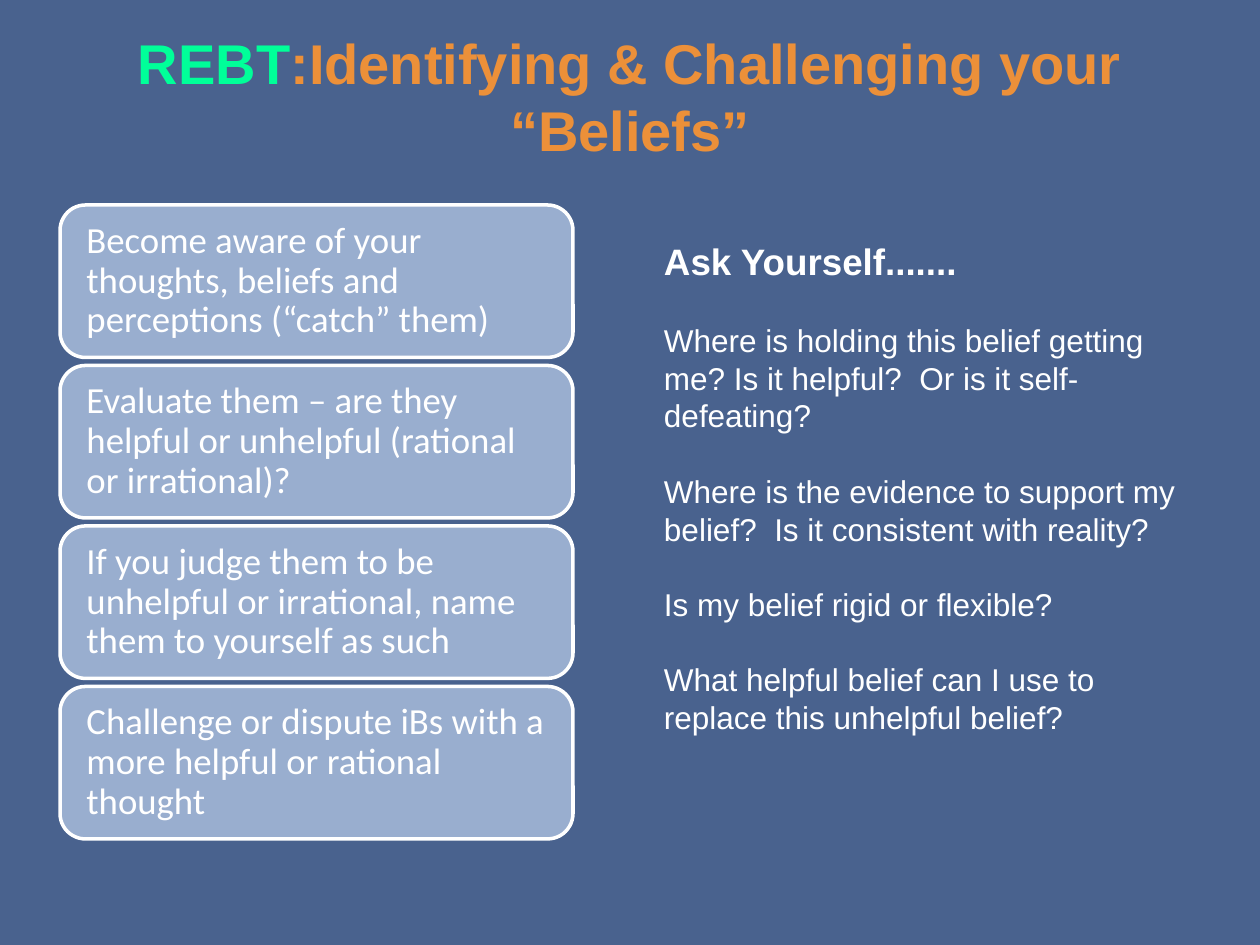
import pptx
import pptx.dml.color
import pptx.enum.shapes
import pptx.enum.text
import pptx.util
import lxml.etree

PX = 914400 / 126
ANCHOR = pptx.enum.text.MSO_ANCHOR
ALIGN = pptx.enum.text.PP_ALIGN
STEPS = [
    "Become aware of your thoughts, beliefs and perceptions (“catch” them)",
    "Evaluate them – are they helpful or unhelpful (rational or irrational)?",
    "If you judge them to be unhelpful or irrational, name them to yourself as such",
    "Challenge or dispute iBs with a more helpful or rational thought",
]
ASKS = [
    "Ask Yourself.......",
    "Where is holding this belief getting me? Is it helpful?  Or is it self-defeating?",
    "Where is the evidence to support my belief?  Is it consistent with reality?",
    "Is my belief rigid or flexible?",
    "What helpful belief can I use to replace this unhelpful belief?",
]


def px(num):
    """Turn pixels into EMU."""
    return pptx.util.Emu(round(num * PX))


def color(code):
    """Turn a hex string into a colour."""
    return pptx.dml.color.RGBColor.from_string(code)


def style(run, size, code="FFFFFF", bold=False, face="Arial"):
    """Format the font of a run."""
    font = run.font
    font.name, font.size, font.bold = face, pptx.util.Pt(size), bold
    font.color.rgb = color(code)


def place(shape, box):
    """Move a shape into a pixel box."""
    shape.left, shape.top, shape.width, shape.height = map(px, box)


def inset(frame, side, end):
    """Set the side and end margins of a text frame and wrap it."""
    frame.margin_left = frame.margin_right = px(side)
    frame.margin_top = frame.margin_bottom = px(end)
    frame.word_wrap = True
    frame.auto_size = pptx.enum.text.MSO_AUTO_SIZE.NONE


def add_title(slide, box):
    """Fill the title placeholder in two colours."""
    title = slide.shapes.title
    place(title, box)
    frame = title.text_frame
    inset(frame, 13, 6)
    frame.vertical_anchor = ANCHOR.MIDDLE
    para = frame.paragraphs[0]
    para.alignment = ALIGN.CENTER
    parts = [("REBT", "00FF99"), (":Identifying & Challenging your “Beliefs”", "EC9039")]
    for text, code in parts:
        run = para.add_run()
        run.text = text
        style(run, 32, code, True)


def add_steps(slide, box, gap):
    """Stack the steps as rounded cards in equal rows."""
    left, top, width, height = box
    pitch = (height + gap) / len(STEPS)
    for row, text in enumerate(STEPS):
        card = slide.shapes.add_shape(
            pptx.enum.shapes.MSO_SHAPE.ROUNDED_RECTANGLE,
            px(left), px(top + row * pitch), px(width), px(pitch - gap))
        card.shadow.inherit = False
        card.fill.solid()
        card.fill.fore_color.rgb = color("99AECF")
        card.line.color.rgb = color("FFFFFF")
        card.line.width = pptx.util.Pt(2)
        frame = card.text_frame
        inset(frame, 19, 11)
        frame.vertical_anchor = ANCHOR.MIDDLE
        para = frame.paragraphs[0]
        para.text = text
        para.alignment = ALIGN.LEFT
        para.line_spacing = 0.9
        style(para.runs[0], 21, face="Calibri")


def add_asks(slide, box):
    """Fill the body placeholder with the heading and questions."""
    body = slide.placeholders[1]
    place(body, box)
    frame = body.text_frame
    inset(frame, 9, 5)
    frame.vertical_anchor = ANCHOR.TOP
    frame.text = "\n".join(ASKS)
    for row, para in enumerate(frame.paragraphs):
        props = para._p.get_or_add_pPr()
        props.set("marL", "0")
        props.set("indent", "0")
        lxml.etree.SubElement(props, pptx.oxml.ns.qn("a:buNone"))
        para.alignment = ALIGN.LEFT
        para.space_before = pptx.util.Pt(21.5 if row else 0)
        style(para.runs[0], 18 if row else 21, bold=row == 0)


def main():
    """Build and save the slide."""
    deck = pptx.Presentation()
    deck.slide_width, deck.slide_height = px(1260), px(945)
    slide = deck.slides.add_slide(deck.slide_layouts[1])
    fill = slide.background.fill
    fill.solid()
    fill.fore_color.rgb = color("49628E")
    add_title(slide, (39, 45, 1182, 101))
    add_asks(slide, (655, 234, 546, 512))
    add_steps(slide, (60, 205, 513, 634), 8)
    deck.save("out.pptx")


if __name__ == "__main__":
    main()
